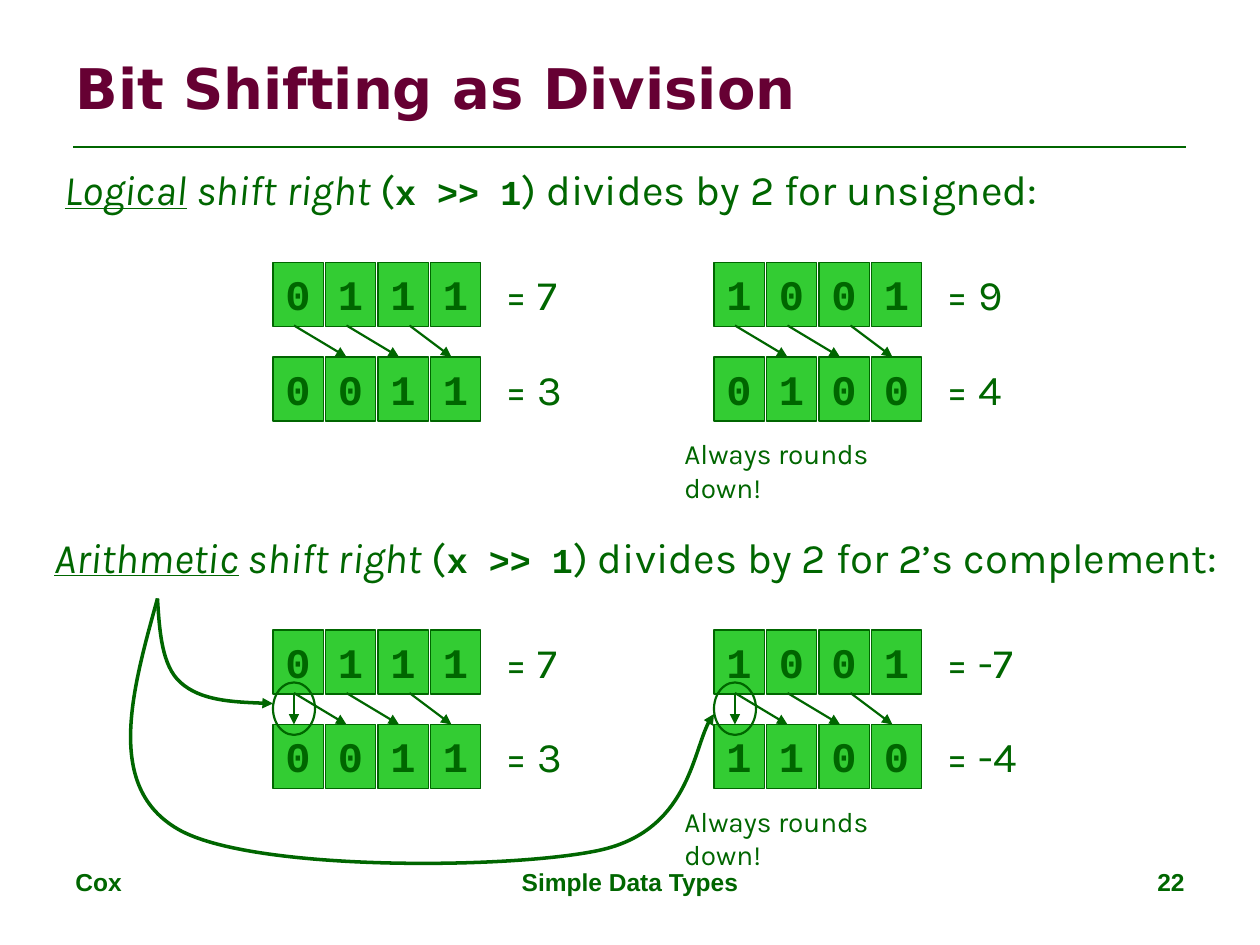
from lxml.etree import SubElement
from pptx import Presentation
from pptx.dml.color import RGBColor
from pptx.enum.shapes import MSO_CONNECTOR, MSO_SHAPE
from pptx.enum.text import MSO_ANCHOR, PP_ALIGN
from pptx.oxml.ns import qn
from pptx.util import Emu, Pt

PX = 7620  # EMU per px, 120 px to the inch
GREEN, BRIGHT, MAROON = "006600", "33CC33", "660033"
SANS, MONO, FOOTER, TITLE = "Karla", "Courier New", "Arial", "DejaVu Sans"
CELL_W, CELL_H, PITCH, ROW_GAP = 48, 61, 50, 90


def px(*values):
    return [Emu(value * PX) for value in values]


def color(hex_string):
    return RGBColor.from_string(hex_string)


class SlideBuilder:
    ink = GREEN

    def __init__(self, slide):
        self.slide = slide

    def style_span(self, span, font, size, bold=False, italic=False,
                   underline=False, ink=None):
        span.font.name, span.font.size = font, Pt(size)
        span.font.bold, span.font.italic = bold, italic
        span.font.underline = underline
        span.font.color.rgb = color(ink or self.ink)

    def style_line(self, shape, width, arrow=False):
        shape.line.color.rgb = color(self.ink)
        shape.line.width = Pt(width)
        if arrow:
            outline = shape.element.spPr.find(qn("a:ln"))
            SubElement(outline, qn("a:tailEnd"), type="triangle")

    def text(self, place, spans, align=PP_ALIGN.LEFT, anchor=MSO_ANCHOR.TOP):
        """Each span is a pair of wording and style."""
        box = self.slide.shapes.add_textbox(*px(*place))
        frame = box.text_frame
        frame.word_wrap = True
        frame.vertical_anchor = anchor
        para = frame.paragraphs[0]
        para.alignment = align
        for wording, style in spans:
            span = para.add_run()
            span.text = wording
            self.style_span(span, **style)

    def shape(self, kind, place, width, fill=None):
        shape = self.slide.shapes.add_shape(kind, *px(*place))
        shape.shadow.inherit = False
        if fill:
            shape.fill.solid()
            shape.fill.fore_color.rgb = color(fill)
        else:
            shape.fill.background()
        self.style_line(shape, width)
        return shape

    def bit_cell(self, left, top, bit):
        cell = self.shape(MSO_SHAPE.RECTANGLE, (left, top, CELL_W, CELL_H), 0.75, BRIGHT)
        frame = cell.text_frame
        frame.text = bit
        frame.vertical_anchor = MSO_ANCHOR.TOP
        para = frame.paragraphs[0]
        para.alignment = PP_ALIGN.LEFT
        self.style_span(para.runs[0], MONO, 24, bold=True)

    def line(self, start, end, width, arrow=False):
        connector = self.slide.shapes.add_connector(
            MSO_CONNECTOR.STRAIGHT, *px(*start, *end))
        self.style_line(connector, width, arrow)
        SubElement(connector.element.spPr, qn("a:effectLst"))

    def curve(self, start, points):
        """Each three points make one cubic curve: two controls and an end."""
        builder = self.slide.shapes.build_freeform(*start, scale=PX)
        builder.add_line_segments(points, close=False)
        shape = builder.convert_to_shape()
        shape.shadow.inherit = False
        shape.fill.background()
        self.style_line(shape, 2, arrow=True)
        path = next(shape.element.iter(qn("a:path")))
        segments = path.findall(qn("a:lnTo"))
        for first in range(0, len(segments), 3):
            bezier = SubElement(path, qn("a:cubicBezTo"))
            for segment in segments[first:first + 3]:
                bezier.append(segment[0])
                path.remove(segment)

    def shift(self, left, top, rows):
        """Two rows of bits with their values, and arrows between them."""
        for index, (bits, value) in enumerate(rows):
            row_top = top + index * ROW_GAP
            for column, bit in enumerate(bits):
                self.bit_cell(left + column * PITCH, row_top, bit)
            self.text((left + 210, row_top, 102, 60),
                      [(f"= {value}", dict(font=SANS, size=24))])
        for start, end in ((20, 70), (70, 120), (130, 170)):
            self.line((left + start, top + 60), (left + end, top + ROW_GAP), 1.25, True)

    def heading(self, place, kind, ending):
        body = dict(font=SANS, size=24)
        self.text(place, [
            (kind, dict(body, italic=True, underline=True)),
            (" shift right", dict(body, italic=True)),
            (" (", body),
            ("x >> 1", dict(font=MONO, size=20, bold=True)),
            (f") divides by 2 for {ending}:", body),
        ])

    def rounding_note(self, top):
        self.text((640, top, 275, 44),
                  [("Always rounds down!", dict(font=SANS, size=16))])


def main():
    deck = Presentation()
    deck.slide_width, deck.slide_height = px(1200, 900)
    page = SlideBuilder(deck.slides.add_slide(deck.slide_layouts[6]))

    # Title, rule and footer
    page.line((70, 140), (1130, 140), 1.5)
    for left, width, wording, align in (
            (60, 280, "Cox", PP_ALIGN.LEFT),
            (410, 380, "Simple Data Types", PP_ALIGN.CENTER),
            (860, 280, "22", PP_ALIGN.RIGHT)):
        page.text((left, 820, width, 62),
                  [(wording, dict(font=FOOTER, size=14, bold=True))], align)
    page.text((60, 36, 1080, 94),
              [("Bit Shifting as Division",
                dict(font=TITLE, size=32, bold=True, ink=MAROON))],
              anchor=MSO_ANCHOR.MIDDLE)

    # Arithmetic shift
    page.shift(260, 600, [("0111", "7"), ("0011", "3")])
    page.shift(680, 600, [("1001", "-7"), ("1100", "-4")])
    for left in (260, 680):
        page.line((left + 20, 660), (left + 20, 690), 1.25, True)
        page.shape(MSO_SHAPE.OVAL, (left, 650, 40, 50), 1.25)
    page.curve((150, 570), [(152, 601), (154, 634), (172, 650),
                            (191, 667), (226, 669), (260, 670)])
    page.curve((150, 570), [(125, 660), (100, 750), (170, 790),
                            (240, 830), (485, 828), (570, 810),
                            (655, 792), (661, 702), (680, 680)])
    page.rounding_note(760)
    page.heading((40, 500, 1136, 60), "Arithmetic", "2’s complement")

    # Logical shift
    page.shift(260, 250, [("0111", "7"), ("0011", "3")])
    page.shift(680, 250, [("1001", "9"), ("0100", "4")])
    page.rounding_note(410)
    page.heading((50, 150, 961, 60), "Logical", "unsigned")

    deck.save("out.pptx")


if __name__ == "__main__":
    main()
